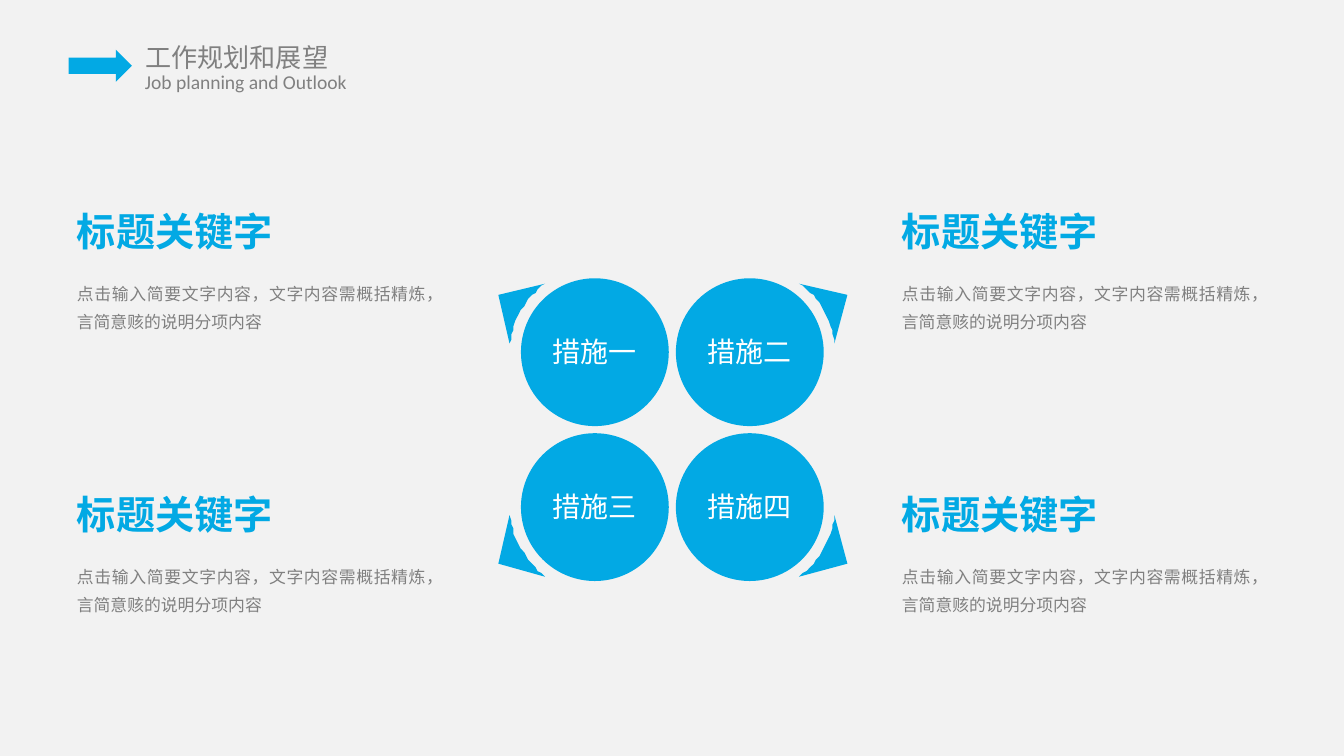
import math
from itertools import product

from lxml import etree
from pptx import Presentation
from pptx.dml.color import RGBColor
from pptx.enum import shapes, text
from pptx.oxml import ns
from pptx.util import Pt

COLORS = {"background": "F2F2F2", "accent": "02A9E4", "gray": "808080", "white": "FFFFFF"}
CJK = "Noto Sans CJK SC"
MIDDLE = (360.2, 230.2)
DIAMETER = 79.2
HALF_PITCH = 41.5
BODY = "点击输入简要文字内容，文字内容需概括精炼，言简意赅的说明分项内容"


def paint(shape, color):
    """Give a shape a flat fill without line or shadow."""
    shape.shadow.inherit = False
    shape.fill.solid()
    shape.fill.fore_color.rgb = RGBColor.from_string(COLORS[color])
    shape.line.fill.background()


def add_text(slide, box, content, size, color, font=CJK, bold=False,
             align=text.PP_ALIGN.LEFT, spacing=None, insets=(0, 0), wrap=True):
    """Add a text box holding one paragraph with one run."""
    shape = slide.shapes.add_textbox(*map(Pt, box))
    frame = shape.text_frame
    frame.word_wrap = wrap
    frame.auto_size = text.MSO_AUTO_SIZE.SHAPE_TO_FIT_TEXT
    frame.margin_left = frame.margin_right = Pt(insets[0])
    frame.margin_top = frame.margin_bottom = Pt(insets[1])
    paragraph = frame.paragraphs[0]
    paragraph.alignment = align
    if spacing:
        paragraph.line_spacing = Pt(spacing)
    run = paragraph.add_run()
    run.text = content
    run.font.size = Pt(size)
    run.font.bold = bold
    run.font.name = font
    run.font.color.rgb = RGBColor.from_string(COLORS[color])
    east_asian = etree.SubElement(run.font._element, ns.qn("a:ea"))
    east_asian.set("typeface", font)


def add_header(slide):
    """Add the arrow with the two-language page heading."""
    add_text(slide, (70.6, 18.7, 114.5, 24.5), "工作规划和展望", 14, "gray",
             insets=(7.2, 3.6), wrap=False)
    add_text(slide, (70.6, 33.8, 124.6, 20.2), "Job planning and Outlook", 10.5, "gray",
             font="Calibri", insets=(7.2, 3.6), wrap=False)
    arrow = slide.shapes.add_shape(shapes.MSO_SHAPE.RIGHT_ARROW,
                                   Pt(36.7), Pt(26.6), Pt(34), Pt(17.3))
    paint(arrow, "accent")


def add_corner(slide, side_x, side_y):
    """Add the pointed corner that hugs the outside of one circle."""
    center_x = MIDDLE[0] + side_x * HALF_PITCH
    center_y = MIDDLE[1] + side_y * HALF_PITCH
    angles = [math.radians(degrees) for degrees in range(6, 55, 3)]
    points = [(center_x + side_x * 45.5 * math.cos(angle),
               center_y + side_y * 45.5 * math.sin(angle)) for angle in angles]
    points.append((center_x + side_x * 51.8, center_y + side_y * 30.2))
    builder = slide.shapes.build_freeform(*points[0], scale=Pt(1))
    builder.add_line_segments(points[1:], close=True)
    paint(builder.convert_to_shape(), "accent")


def add_circle(slide, side_x, side_y, label):
    """Add one measure circle and its centred label."""
    center_x = MIDDLE[0] + side_x * HALF_PITCH
    center_y = MIDDLE[1] + side_y * HALF_PITCH
    radius = DIAMETER / 2
    circle = slide.shapes.add_shape(shapes.MSO_SHAPE.OVAL, Pt(center_x - radius),
                                    Pt(center_y - radius), Pt(DIAMETER), Pt(DIAMETER))
    paint(circle, "accent")
    add_text(slide, (center_x - 36, center_y - 9.4, 72, 18), label, 15, "white",
             align=text.PP_ALIGN.CENTER)


def add_description(slide, left, top):
    """Add a keyword title with its explanatory text."""
    add_text(slide, (left, top + 36.8, 196, 28.8), BODY, 9, "gray",
             align=text.PP_ALIGN.JUSTIFY, spacing=15)
    add_text(slide, (left, top, 110, 26), "标题关键字", 21, "accent", bold=True)


def main():
    """Build and save the slide."""
    presentation = Presentation()
    presentation.slide_width, presentation.slide_height = Pt(720), Pt(405)
    slide = presentation.slides.add_slide(presentation.slide_layouts[6])
    slide.background.fill.solid()
    slide.background.fill.fore_color.rgb = RGBColor.from_string(COLORS["background"])
    add_header(slide)
    sides = [(side_x, side_y) for side_y, side_x in product((-1, 1), repeat=2)]
    for side_x, side_y in sides:
        add_corner(slide, side_x, side_y)
    for (side_x, side_y), number in zip(sides, "一二三四"):
        add_circle(slide, side_x, side_y, f"措施{number}")
    for left, top in product((41.2, 483.2), (110.8, 262.4)):
        add_description(slide, left, top)
    presentation.save("out.pptx")


if __name__ == "__main__":
    main()
